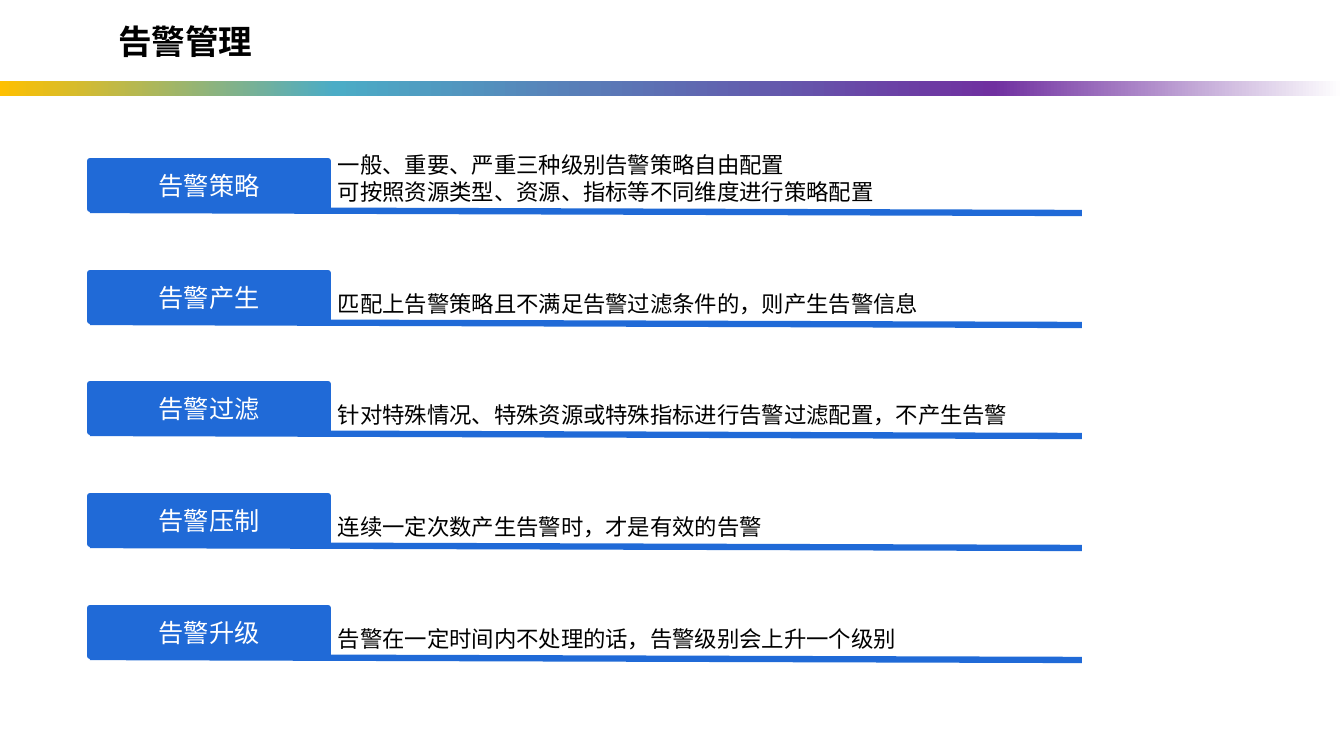
from dataclasses import dataclass

from lxml import etree
from pptx import Presentation
from pptx import util as u
from pptx.dml.color import RGBColor
from pptx.enum import shapes, text
from pptx.oxml import ns

PX = 914400 / 100.8


@dataclass(frozen=True)
class Theme:
    font: str = "Noto Sans CJK SC"
    blue: str = "206AD7"
    black: str = "000000"
    white: str = "FFFFFF"
    rainbow: tuple = ((0, "FFC000"), (25, "4BACC6"), (74, "7030A0"), (100, "FFFFFF"))
    title: int = 24
    label: int = 18
    body: int = 16
    leading: float = 19.2
    rule: float = 4.5


def px(*lengths):
    return [u.Emu(round(n * PX)) for n in lengths]


def rgb(value):
    return RGBColor.from_string(value)


class Deck:
    def __init__(self, theme):
        self.theme = theme
        self.prs = Presentation()
        self.prs.slide_width, self.prs.slide_height = px(1344, 756)
        self.s = self.prs.slides.add_slide(self.prs.slide_layouts[5])

    def set_text(self, sp, words, size, color, align, bold=False, leading=None):
        tf = sp.text_frame
        tf.text = words
        tf.word_wrap = True
        tf.auto_size = text.MSO_AUTO_SIZE.NONE
        tf.vertical_anchor = text.MSO_ANCHOR.MIDDLE
        for p in tf.paragraphs:
            p.alignment = align
            if leading:
                p.line_spacing = u.Pt(leading)
            for r in p.runs:
                r.font.size = u.Pt(size)
                r.font.bold = bold
                r.font.color.rgb = rgb(color)
                r.font.name = self.theme.font
                ea = etree.SubElement(r._r.get_or_add_rPr(), ns.qn("a:ea"))
                ea.set("typeface", self.theme.font)

    def title(self, words, *box):
        sp = self.s.shapes.title
        sp.left, sp.top, sp.width, sp.height = px(*box)
        self.set_text(sp, words, self.theme.title, self.theme.black, text.PP_ALIGN.LEFT, bold=True)

    def rainbow_bar(self, *box):
        sp = self.s.shapes.add_shape(shapes.MSO_SHAPE.RECTANGLE, *px(*box))
        sp.shadow.inherit = False
        sp.line.fill.background()
        sp.fill.gradient()
        sp.fill.gradient_angle = 0
        stops = sp._element.spPr.find(".//" + ns.qn("a:gsLst"))
        for stop in list(stops):
            stops.remove(stop)
        for percent, color in self.theme.rainbow:
            stop = etree.SubElement(stops, ns.qn("a:gs"), pos=str(percent * 1000))
            etree.SubElement(stop, ns.qn("a:srgbClr"), val=color)

    def rule(self, *ends):
        line = self.s.shapes.add_connector(shapes.MSO_CONNECTOR.STRAIGHT, *px(*ends))
        line.line.color.rgb = rgb(self.theme.blue)
        line.line.width = u.Pt(self.theme.rule)
        etree.SubElement(line._element.spPr, ns.qn("a:effectLst"))

    def label(self, words, *box):
        sp = self.s.shapes.add_shape(shapes.MSO_SHAPE.RECTANGLE, *px(*box))
        sp.shadow.inherit = False
        sp.fill.solid()
        sp.fill.fore_color.rgb = rgb(self.theme.blue)
        sp.line.color.rgb = rgb(self.theme.blue)
        sp.line.width = u.Pt(self.theme.rule)
        self.set_text(sp, words, self.theme.label, self.theme.white, text.PP_ALIGN.CENTER)

    def description(self, words, *box):
        sp = self.s.shapes.add_textbox(*px(*box))
        self.set_text(sp, words, self.theme.body, self.theme.black, text.PP_ALIGN.LEFT,
                      leading=self.theme.leading)


ALARM_STEPS = (
    ("告警策略", "一般、重要、严重三种级别告警策略自由配置\n可按照资源类型、资源、指标等不同维度进行策略配置"),
    ("告警产生", "匹配上告警策略且不满足告警过滤条件的，则产生告警信息"),
    ("告警过滤", "针对特殊情况、特殊资源或特殊指标进行告警过滤配置，不产生告警"),
    ("告警压制", "连续一定次数产生告警时，才是有效的告警"),
    ("告警升级", "告警在一定时间内不处理的话，告警级别会上升一个级别"),
)
FIRST_TOP, LAST_TOP = 161, 608


def main():
    deck = Deck(Theme())
    deck.rainbow_bar(-1, 81, 1344, 15)
    deck.title("告警管理", 108, 16, 948, 50)
    pitch = (LAST_TOP - FIRST_TOP) / (len(ALARM_STEPS) - 1)
    for i, (name, detail) in enumerate(ALARM_STEPS):
        top = round(FIRST_TOP + i * pitch)
        height = 10 + 27 * len(detail.splitlines())
        deck.rule(90, top + 49, 1082, top + 52)
        deck.label(name, 90, top, 238, 48)
        deck.description(detail, 328, top + 49 - height, 876, height)
    deck.prs.save("out.pptx")


if __name__ == "__main__":
    main()
